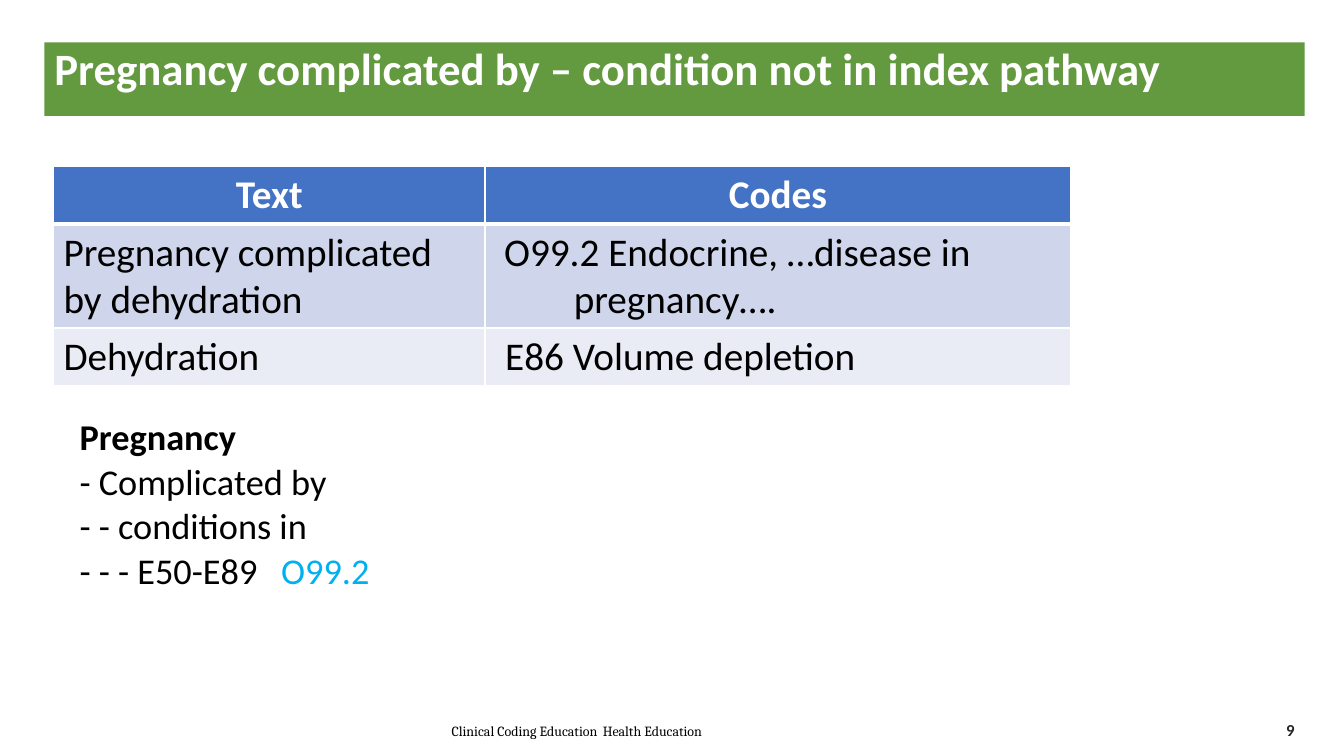
import pptx
import pptx.dml.color
import pptx.enum.shapes
import pptx.enum.text
import pptx.oxml
import pptx.oxml.ns
import pptx.util

COLORS = {
    "white": "FFFFFF", "black": "000000", "charcoal": "262626",
    "green": "63993F", "blue": "4472C4", "sky": "00B0F0",
    "band": "CFD5EA", "pale": "E9EBF5",
}
ALIGN = pptx.enum.text.PP_ALIGN
ANCHOR = pptx.enum.text.MSO_ANCHOR
FORMATS = {
    "title": {"size": 32, "bold": True, "color": "white"},
    "header": {"size": 28, "bold": True, "color": "white"},
    "cell": {"size": 28, "bold": False, "color": "black"},
    "term": {"size": 25.9, "bold": True, "color": "black"},
    "index": {"size": 25.9, "bold": False, "color": "black"},
    "code": {"size": 25.9, "bold": False, "color": "sky"},
    "footer": {"size": 10, "name": "Cambria", "color": "black"},
    "number": {"size": 12, "bold": True, "color": "charcoal"},
}


class SlideBuilder:
    def __init__(self, width, height):
        self.deck = pptx.Presentation()
        self.deck.slide_width = pptx.util.Inches(width)
        self.deck.slide_height = pptx.util.Inches(height)
        self.page = self.deck.slides.add_slide(self.deck.slide_layouts[6])

    def across(self, percent):
        return round(self.deck.slide_width * percent / 100)

    def down(self, percent):
        return round(self.deck.slide_height * percent / 100)

    def place(self, left, top, width, height):
        return self.across(left), self.down(top), self.across(width), self.down(height)

    def color(self, name):
        return pptx.dml.color.RGBColor.from_string(COLORS[name])

    def fill(self, target, name):
        target.fill.solid()
        target.fill.fore_color.rgb = self.color(name)

    def fill_text(self, frame, lines, tab=None, **settings):
        frame.word_wrap = True
        for number, spans in enumerate(lines):
            para = frame.add_paragraph() if number else frame.paragraphs[0]
            if tab:
                self.indent(para, tab=tab)
            for name, value in settings.items():
                if number or name != "space_before":
                    setattr(para, name, value)
            for text, style in spans:
                self.span(para, text, style)

    def span(self, para, text, style):
        span = para.add_run()
        span.text = text
        values = {"name": "Calibri", **FORMATS[style]}
        span.font.color.rgb = self.color(values.pop("color"))
        values["size"] = pptx.util.Pt(values["size"])
        for name, value in values.items():
            setattr(span.font, name, value)

    def indent(self, para, left=0, first=0, tab=None):
        properties = para._p.get_or_add_pPr()
        properties.set("marL", str(self.across(left)))
        properties.set("indent", str(self.across(first)))
        if tab:
            properties.append(pptx.oxml.parse_xml(
                f'<a:tabLst {pptx.oxml.ns.nsdecls("a")}>'
                f'<a:tab pos="{self.across(tab)}" algn="l"/></a:tabLst>'))

    def banner(self, area, color, lines, **settings):
        box = self.page.shapes.add_shape(
            pptx.enum.shapes.MSO_SHAPE.RECTANGLE, *self.place(*area))
        box.shadow.inherit = False
        self.fill(box, color)
        box.line.fill.background()
        box.text_frame.vertical_anchor = ANCHOR.TOP
        self.fill_text(box.text_frame, lines, alignment=ALIGN.LEFT, **settings)

    def text(self, area, lines, anchor=ANCHOR.TOP, **settings):
        box = self.page.shapes.add_textbox(*self.place(*area))
        box.text_frame.vertical_anchor = anchor
        self.fill_text(box.text_frame, lines, **settings)

    def border(self, cell, sides):
        for side, points in sides.items():
            cell._tc.get_or_add_tcPr().append(pptx.oxml.parse_xml(
                f'<a:ln{side} {pptx.oxml.ns.nsdecls("a")} w="{pptx.util.Pt(points)}">'
                f'<a:solidFill><a:srgbClr val="{COLORS["white"]}"/></a:solidFill></a:ln{side}>'))

    def table(self, left, top, columns, rows, texts, fills, indents):
        area = self.place(left, top, sum(columns), sum(rows))
        table = self.page.shapes.add_table(len(rows), len(columns), *area).table
        for column, width in zip(table.columns, columns):
            column.width = self.across(width)
        for row, height in zip(table.rows, rows):
            row.height = self.down(height)
        for r, words in enumerate(texts):
            for c, text in enumerate(words):
                cell = table.cell(r, c)
                self.border(cell, {"L": 1, "R": 1, "T": 3 if r == 1 else 1,
                                   "B": 1 if r else 3})
                self.fill(cell, fills[r])
                self.fill_text(cell.text_frame, [[(text, "cell" if r else "header")]],
                               alignment=ALIGN.LEFT if r else ALIGN.CENTER)
                if (r, c) in indents:
                    self.indent(cell.text_frame.paragraphs[0], *indents[r, c])


def main():
    slide = SlideBuilder(13.33, 7.5)
    slide.text((32.86, 94.53, 33.91, 4.4),
               [[("Clinical Coding Education\tHealth Education", "footer")]],
               anchor=ANCHOR.MIDDLE, tab=20.78)
    slide.banner((3.3, 5.6, 93.77, 9.73), "green",
                 [[("Pregnancy complicated by – condition not in index pathway", "title")]],
                 line_spacing=0.9)
    slide.text((5.18, 55.73, 30, 25.33), [
        [("Pregnancy", "term")],
        [("- Complicated by", "index")],
        [("- - conditions in", "index")],
        [("- - - E50-E89\t", "index"), ("O99.2", "code")],
    ], tab=15.08, line_spacing=0.7, space_before=pptx.util.Pt(10))
    slide.text((86.27, 94.4, 10.8, 4.4), [[("9", "number")]],
               anchor=ANCHOR.MIDDLE, alignment=ALIGN.RIGHT)
    slide.table(3.98, 22, [32.11, 43.59], [7.6, 13.8, 7.6], [
        ["Text", "Codes"],
        ["Pregnancy complicated by dehydration", "O99.2 Endocrine, …disease in pregnancy…."],
        ["Dehydration", "E86 Volume depletion"],
    ], ["blue", "band", "pale"], {(1, 1): (5.85, -5.18), (2, 1): (0.75, 0)})
    slide.deck.save("out.pptx")


if __name__ == "__main__":
    main()
